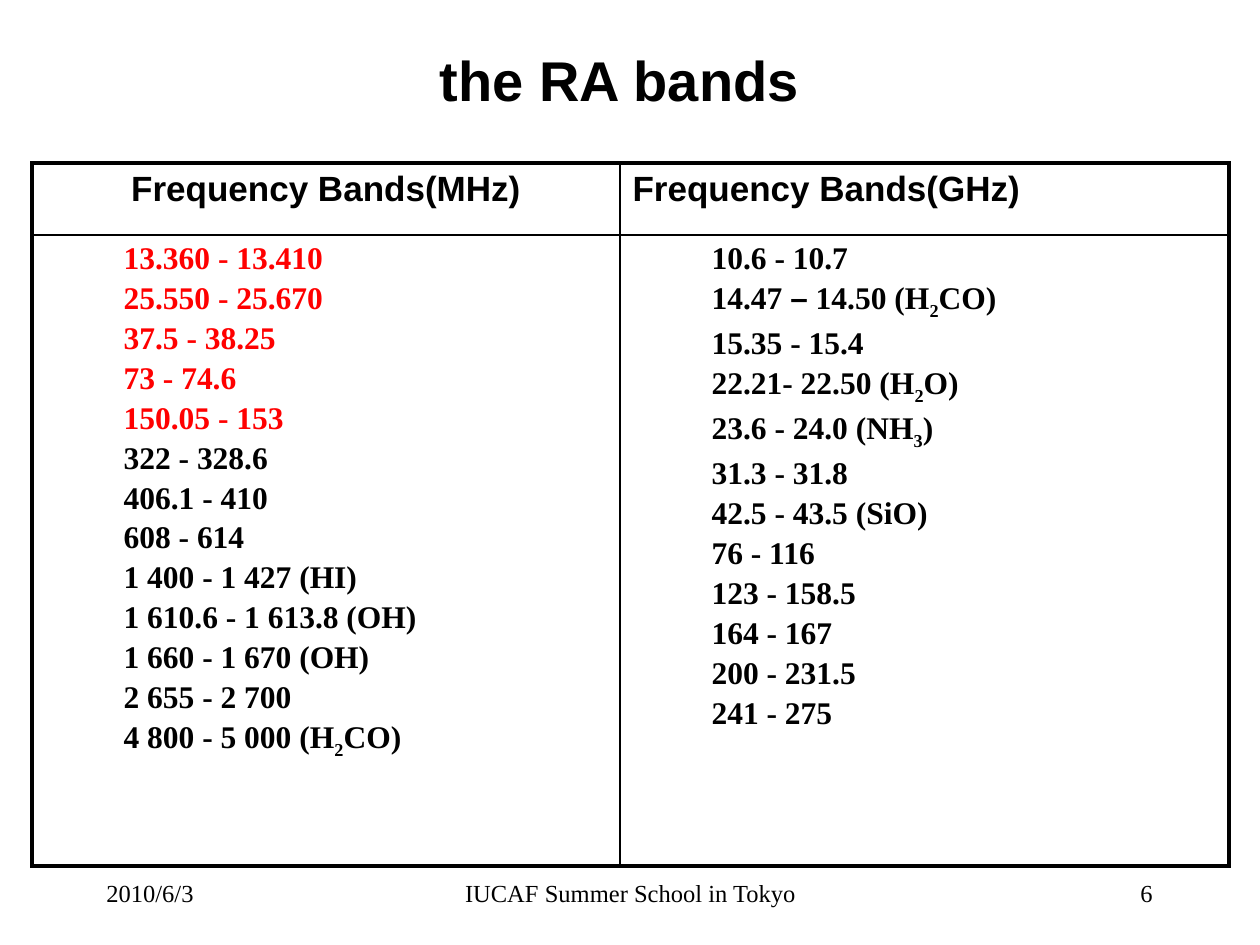
from lxml.etree import SubElement
from pptx import Presentation
from pptx.dml.color import RGBColor
from pptx.enum.text import MSO_ANCHOR as Anchor, PP_ALIGN as Align
from pptx.oxml.ns import qn
from pptx.util import Emu, Pt

PX = 914400 / 126
SANS, SERIF = "Arial", "Times New Roman"
BLACK, RED = "000000", "FF0000"
LABELS = [
    ("the RA bands", (84, 32, 1071, 94), Align.CENTER, SANS, 32, True),
    ("2010/6/3", (94, 861, 262, 63), Align.LEFT, SERIF, 14, False),
    ("IUCAF Summer School in Tokyo", (431, 861, 399, 63), Align.CENTER, SERIF, 14, False),
    ("6", (903, 861, 262, 63), Align.RIGHT, SERIF, 14, False),
]
HEADERS = [("Frequency Bands(MHz)", Align.CENTER), ("Frequency Bands(GHz)", Align.LEFT)]
LOW_BANDS = ["13.360 - 13.410", "25.550 - 25.670", "37.5 - 38.25", "73 - 74.6", "150.05 - 153"]
MHZ_BANDS = [
    "322 - 328.6", "406.1 - 410", "608 - 614", "1 400 - 1 427 (HI)",
    "1 610.6 - 1 613.8 (OH)", "1 660 - 1 670 (OH)", "2 655 - 2 700",
    "4 800 - 5 000 (H|2|CO)",
]
GHZ_BANDS = [
    "10.6 - 10.7", "14.47 |–| 14.50 (H|2|CO)", "15.35 - 15.4", "22.21- 22.50 (H|2|O)",
    "23.6 - 24.0 (NH|3|)", "31.3 - 31.8", "42.5 - 43.5 (SiO)", "76 - 116",
    "123 - 158.5", "164 - 167", "200 - 231.5", "241 - 275",
]
BODY = [
    [(band, RED) for band in LOW_BANDS] + [(band, BLACK) for band in MHZ_BANDS],
    [(band, BLACK) for band in GHZ_BANDS],
]
TABLE_BOX = (32, 163, 1197, 703)
COLUMNS, ROWS = (588, 609), (72, 631)
INDENT = 79


def px(length):
    return Emu(round(length * PX))


def style(span, font, size, bold, color=BLACK):
    span.font.name, span.font.size, span.font.bold = font, Pt(size), bold
    span.font.color.rgb = RGBColor.from_string(color)


def add_label(page, text, place, align, font, size, bold):
    frame = page.shapes.add_textbox(*map(px, place)).text_frame
    frame.word_wrap, frame.vertical_anchor = True, Anchor.MIDDLE
    frame.text = text
    para = frame.paragraphs[0]
    para.alignment = align
    style(para.runs[0], font, size, bold)


def set_borders(cell, widths):
    cell.fill.background()
    props = cell._tc.get_or_add_tcPr()
    for index, (side, width) in enumerate(widths):
        line = SubElement(props, qn("a:ln" + side), w=str(Pt(width)))
        fill = SubElement(line, qn("a:solidFill"))
        SubElement(fill, qn("a:srgbClr"), val=BLACK)
        props.insert(index, line)


def fill_bands(frame, bands):
    for index, (band, color) in enumerate(bands):
        para = frame.add_paragraph() if index else frame.paragraphs[0]
        if index:
            para.space_before = Pt(2.9)
        para._p.get_or_add_pPr().set("marL", str(px(INDENT)))
        for piece in band.split("|"):
            span = para.add_run()
            span.text = piece
            style(span, SANS if piece == "–" else SERIF, 18, True, color)
            if piece.isdigit():
                span._r.get_or_add_rPr().set("baseline", "-25000")


def add_bands_table(page):
    table = page.shapes.add_table(2, 2, *map(px, TABLE_BOX)).table
    table.first_row = table.horz_banding = False
    for column, width in zip(table.columns, COLUMNS):
        column.width = px(width)
    for row, height in zip(table.rows, ROWS):
        row.height = px(height)
    for across in range(2):
        for down in range(2):
            outer = [("L", across == 0), ("R", across == 1), ("T", down == 0), ("B", down == 1)]
            set_borders(table.cell(down, across), [(side, 2.25 if edge else 1) for side, edge in outer])
        text, align = HEADERS[across]
        frame = table.cell(0, across).text_frame
        frame.text = text
        frame.paragraphs[0].alignment = align
        style(frame.paragraphs[0].runs[0], SANS, 20, True)
        fill_bands(table.cell(1, across).text_frame, BODY[across])


def main():
    """Build the slide of radio astronomy bands."""
    deck = Presentation()
    deck.slide_width, deck.slide_height = px(1260), px(945)
    page = deck.slides.add_slide(deck.slide_layouts[6])
    for label in LABELS:
        add_label(page, *label)
    add_bands_table(page)
    deck.save("out.pptx")


if __name__ == "__main__":
    main()
